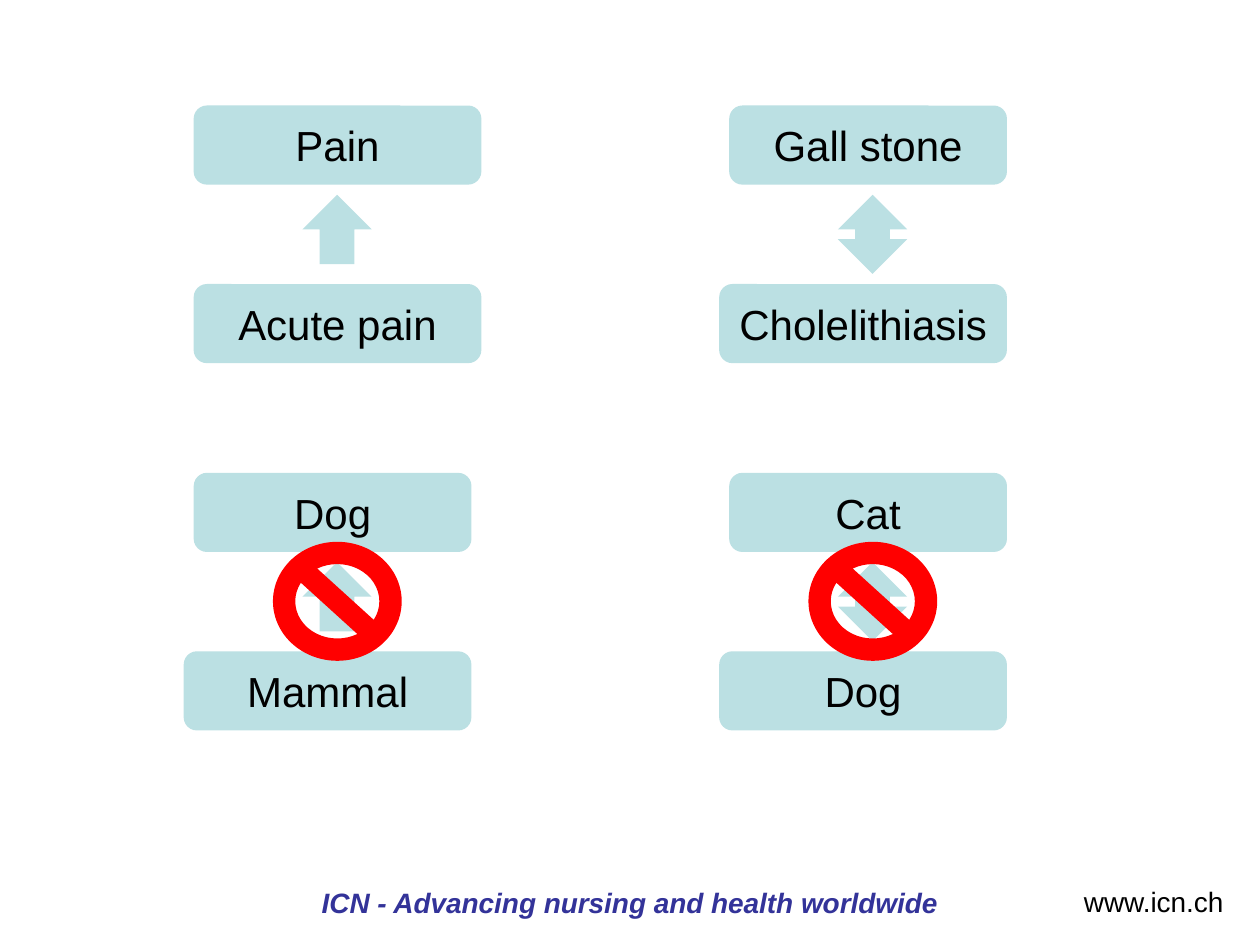
import pptx
import pptx.util
import pptx.dml.color
import pptx.enum.shapes
import pptx.enum.text

Pt = pptx.util.Pt
RGBColor = pptx.dml.color.RGBColor
SHAPE = pptx.enum.shapes.MSO_SHAPE
ALIGN = pptx.enum.text.PP_ALIGN
ANCHOR = pptx.enum.text.MSO_ANCHOR

PALE_TEAL = RGBColor(0xBB, 0xE0, 0xE3)
RED = RGBColor(0xFF, 0x00, 0x00)
BLACK = RGBColor(0x00, 0x00, 0x00)
NAVY = RGBColor(0x33, 0x33, 0x99)

COLUMN_STEP = 306
ROW_STEP = 209.9


def add_filled(shapes, kind, box, color):
    filled = shapes.add_shape(kind, *[Pt(length) for length in box])
    filled.shadow.inherit = False
    filled.fill.solid()
    filled.fill.fore_color.rgb = color
    filled.line.fill.background()
    return filled


def write(frame, text, align, anchor, font_format):
    frame.vertical_anchor = anchor
    paragraph = frame.paragraphs[0]
    paragraph.alignment = align
    run = paragraph.add_run()
    run.text = text
    run.font.name = "Arial"
    color = font_format["color"]
    run.font.color.rgb = color
    for attribute in ("size", "bold", "italic"):
        if attribute in font_format:
            setattr(run.font, attribute, font_format[attribute])


deck = pptx.Presentation()
deck.slide_width, deck.slide_height = Pt(720), Pt(540)
slide = deck.slides.add_slide(deck.slide_layouts[6])

# Footer: text, box, alignment, font
footers = [
    ("ICN - Advancing nursing and health worldwide", (0, 502.5, 720, 37.5), ALIGN.CENTER,
     {"size": Pt(16), "color": NAVY, "bold": True, "italic": True}),
    ("www.icn.ch", (598.3, 501.8, 108, 24.5), ALIGN.RIGHT,
     {"size": Pt(16), "color": BLACK}),
]
for text, box, align, font_format in footers:
    footer = slide.shapes.add_textbox(*[Pt(length) for length in box])
    footer.text_frame.word_wrap = True
    write(footer.text_frame, text, align, ANCHOR.TOP, font_format)

# Column, row, and (term, left, width) of the upper and the lower term
relations = [
    (0, 0, ("Pain", 110.7, 164.4), ("Acute pain", 110.7, 164.4)),
    (0, 1, ("Dog", 110.7, 158.7), ("Mammal", 105, 164.4)),
    (1, 0, ("Gall stone", 416.7, 158.7), ("Cholelithiasis", 411, 164.4)),
    (1, 1, ("Cat", 416.7, 158.7), ("Dog", 411, 164.4)),
]
arrows = [(SHAPE.UP_ARROW, 39.6), (SHAPE.UP_DOWN_ARROW, 45.2)]
term_font = {"size": Pt(24), "color": BLACK}

for column, row, upper, lower in relations:
    relation = slide.shapes.add_group_shape().shapes
    row_top = 60.3 + row * ROW_STEP
    for (term, left, width), top in ((upper, row_top), (lower, row_top + 102)):
        term_box = add_filled(relation, SHAPE.FLOWCHART_ALTERNATE_PROCESS,
                              (left, top, width, 45.2), PALE_TEAL)
        term_box.text_frame.word_wrap = False
        write(term_box.text_frame, term, ALIGN.CENTER, ANCHOR.MIDDLE, term_font)
    arrow, arrow_height = arrows[column]
    add_filled(relation, arrow,
               (172.8 + column * COLUMN_STEP, row_top + 51, 39.6, arrow_height), PALE_TEAL)

# The relations in the lower row are not allowed
for column in range(2):
    add_filled(slide.shapes, SHAPE.NO_SYMBOL,
               (156 + column * COLUMN_STEP, 309.6, 73.6, 68), RED)

deck.save("out.pptx")
